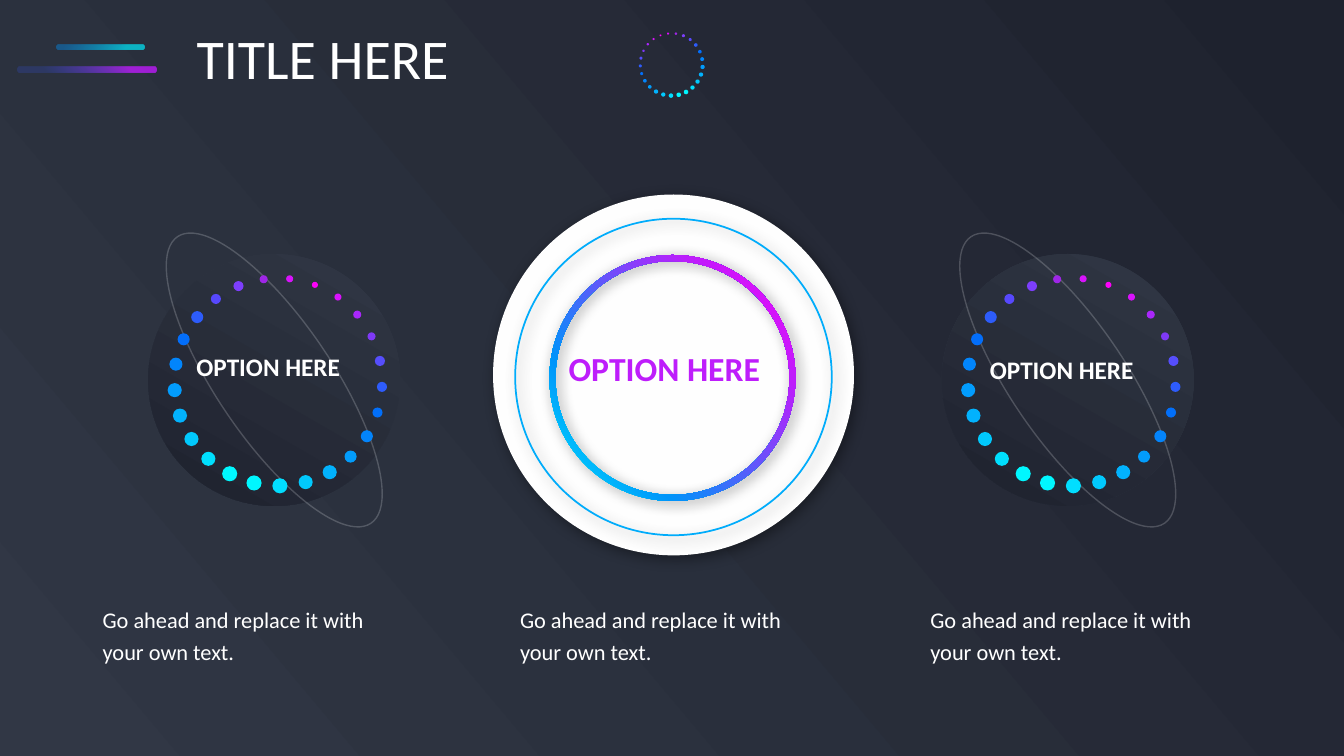
from math import cos, radians, sin

from lxml.etree import SubElement
from pptx import Presentation
from pptx.dml.color import RGBColor
from pptx.enum.shapes import MSO_SHAPE
from pptx.enum.text import MSO_ANCHOR, MSO_AUTO_SIZE, PP_ALIGN
from pptx.oxml.ns import qn
from pptx.util import Inches, Pt

# Content
TITLE = "TITLE HERE"
CAPTION = "Go ahead and replace it with your own text."
OPTIONS = [  # heading, heading box (left, top, width, height), size, colour, caption left
    ("OPTION HERE", (1.85, 3.44, 1.64, 0.4), 18, "white", 0.92),
    ("OPTION HERE", (5.54, 3.4, 2.12, 0.5), 24, "purple", 5.06),
    ("OPTION HERE", (9.72, 3.47, 1.64, 0.4), 18, "white", 9.13),
]
COLORS = {
    "white": "FFFFFF", "disc": "FEFEFE", "purple": "BE1DFB", "magenta": "FC02F9",
    "cyan": "00ECFE", "blue": "0094FA", "indigo": "3558FB", "thin ring": "00ACFB",
    "orbit": "F6F9FC", "night light": "313745", "night dark": "1E222E", "shadow": "000000",
}
DOTS = [  # colour, diameter on a large ring
    ("01DEFF", 0.15), ("00F7FF", 0.15), ("00F7FF", 0.15), ("00DFFE", 0.14), ("01C9FD", 0.14),
    ("02B2FD", 0.14), ("029CFD", 0.14), ("0285FB", 0.13), ("036EFA", 0.12), ("2D5CFA", 0.12),
    ("5748FD", 0.1), ("7D3EFC", 0.1), ("9F26E7", 0.08), ("D813FB", 0.07), ("FC02F9", 0.06),
    ("D912FC", 0.07), ("AA27FB", 0.08), ("7F39F6", 0.08), ("564EFC", 0.1), ("2E5CFB", 0.1),
    ("026FF9", 0.1), ("0384FB", 0.12), ("029CFB", 0.12), ("02B2FD", 0.14), ("01C9FD", 0.14),
]
NIGHT = [(0, "night light", 100), (100, "night dark", 100)]
NEON = [(0, "cyan", 100), (27, "blue", 100), (76, "purple", 100), (100, "magenta", 100)]
BARS = [  # left, top, width, height, gradient stops, gradient angle
    (0.84, 0, 0.05, 1.38,
     [(0, "indigo", 20), (21, "indigo", 20), (80, "purple", 80), (100, "purple", 80)], 220),
    (0.97, 0.03, 0.05, 0.87,
     [(0, "cyan", 70), (21, "cyan", 70), (90, "blue", 40), (100, "blue", 40)], 120),
]
DOT_RADIUS = 1.03
FIRST_DOT_ANGLE = -0.9
SIDE_CENTERS = [(2.72, 3.77), (10.59, 3.77)]
FONT = "Calibri"


def rgb(name):
    return RGBColor.from_string(COLORS.get(name, name))


def add_color(parent, name, opacity):
    color = SubElement(parent, qn("a:srgbClr"), val=COLORS[name])
    if opacity < 100:
        SubElement(color, qn("a:alpha"), val=str(opacity * 1000))


def set_gradient(fill, properties, stops, angle):
    fill.solid()
    solid = properties.find(qn("a:solidFill"))
    gradient = solid.makeelement(qn("a:gradFill"), rotWithShape="1")
    stop_list = SubElement(gradient, qn("a:gsLst"))
    for position, name, opacity in stops:
        stop = SubElement(stop_list, qn("a:gs"), pos=str(position * 1000))
        add_color(stop, name, opacity)
    SubElement(gradient, qn("a:lin"), ang=str(angle * 60000), scaled="0")
    properties.replace(solid, gradient)


def add_shape(shapes, kind, left, top, width, height, fill=None, angle=0):
    shape = shapes.add_shape(kind, Inches(left), Inches(top), Inches(width), Inches(height))
    shape.shadow.inherit = False
    shape.line.fill.background()
    if fill is None:
        shape.fill.background()
    elif isinstance(fill, list):
        set_gradient(shape.fill, shape.element.spPr, fill, angle)
    else:
        shape.fill.solid()
        shape.fill.fore_color.rgb = rgb(fill)
    return shape


def add_round(shapes, center, width, height, fill=None, angle=0, kind=MSO_SHAPE.OVAL):
    x, y = center
    return add_shape(shapes, kind, x - width / 2, y - height / 2, width, height, fill, angle)


def set_outline(shape, name, width, opacity=100):
    shape.line.color.rgb = rgb(name)
    shape.line.width = Pt(width)
    solid = shape.element.spPr.find(qn("a:ln")).find(qn("a:solidFill"))
    solid.clear()
    add_color(solid, name, opacity)


def add_soft_shadow(shape):
    effects = shape.element.spPr.find(qn("a:effectLst"))
    shadow = SubElement(effects, qn("a:outerShdw"), blurRad=str(Pt(10)), dist=str(Pt(3)),
                        dir=str(45 * 60000), algn="tl", rotWithShape="0")
    add_color(shadow, "shadow", 40)


def add_dot_ring(shapes, center, scale=1, direction=1):
    group = shapes.add_group_shape()
    for index, (color, diameter) in enumerate(DOTS):
        turn = radians(FIRST_DOT_ANGLE + index * 360 / len(DOTS))
        x = center[0] - direction * DOT_RADIUS * scale * sin(turn)
        y = center[1] + DOT_RADIUS * scale * cos(turn)
        add_round(group.shapes, (x, y), diameter * scale, diameter * scale, color)


def set_text(shape, text, box, size, color, bold=False, spacing=None):
    shape.left, shape.top, shape.width, shape.height = map(Inches, box)
    frame = shape.text_frame
    frame.text = text
    frame.word_wrap = True
    frame.auto_size = MSO_AUTO_SIZE.NONE
    frame.vertical_anchor = MSO_ANCHOR.TOP
    paragraph = frame.paragraphs[0]
    paragraph.alignment = PP_ALIGN.LEFT
    paragraph.line_spacing = spacing or 1.0
    paragraph.font.name = FONT
    paragraph.font.size = Pt(size)
    paragraph.font.bold = bold
    paragraph.font.color.rgb = rgb(color)


def add_text(shapes, text, box, *style):
    set_text(shapes.add_textbox(*map(Inches, box)), text, box, *style)


def main():
    presentation = Presentation()
    presentation.slide_width = Inches(13.33)
    presentation.slide_height = Inches(7.5)
    slide = presentation.slides.add_slide(presentation.slide_layouts[5])
    shapes = slide.shapes

    # Background
    background_fill = slide.background.fill
    background_fill.solid()
    set_gradient(background_fill, next(slide.element.iter(qn("p:bgPr"))), NIGHT, 320)

    # Header: small ring, two bars and the title
    add_dot_ring(shapes, (6.66, 0.64), scale=0.3, direction=-1)
    for left, top, width, height, stops, angle in BARS:
        bar = add_shape(shapes, MSO_SHAPE.ROUNDED_RECTANGLE, left, top, width, height, stops, angle)
        bar.adjustments[0] = 0.42
        bar.rotation = 90
    set_text(shapes.title, TITLE, (1.85, 0.18, 2.73, 0.77), 40, "white")

    # Side options: dark disc, tilted orbit and ring of dots
    for x, y in SIDE_CENTERS:
        group = shapes.add_group_shape()
        add_round(group.shapes, (x, y), 2.5, 2.5, NIGHT, 120)
        orbit = add_round(group.shapes, (x, y), 1.15, 3.43)
        orbit.rotation = 326
        set_outline(orbit, "orbit", 1, 20)
        add_dot_ring(group.shapes, (x + 0.04, y + 0.02))

    # Middle option: white disc, neon ring and thin ring
    group = shapes.add_group_shape()
    disc = add_round(group.shapes, (6.68, 3.72), 3.58, 3.58, "disc")
    neon_ring = add_round(group.shapes, (6.67, 3.75), 2.44, 2.44, NEON, 320, MSO_SHAPE.DONUT)
    neon_ring.adjustments[0] = 0.06 / 2.44
    thin_ring = add_round(group.shapes, (6.68, 3.74), 3.14, 3.14)
    set_outline(thin_ring, "thin ring", 1.25)
    for shape in (disc, neon_ring, thin_ring):
        add_soft_shadow(shape)

    # Headings and captions
    for heading, box, size, color, caption_left in OPTIONS:
        add_text(shapes, heading, box, size, color, True)
        add_text(shapes, CAPTION, (caption_left, 5.91, 3.23, 0.75), 16, "white", False, 1.2)

    presentation.save("out.pptx")


if __name__ == "__main__":
    main()
